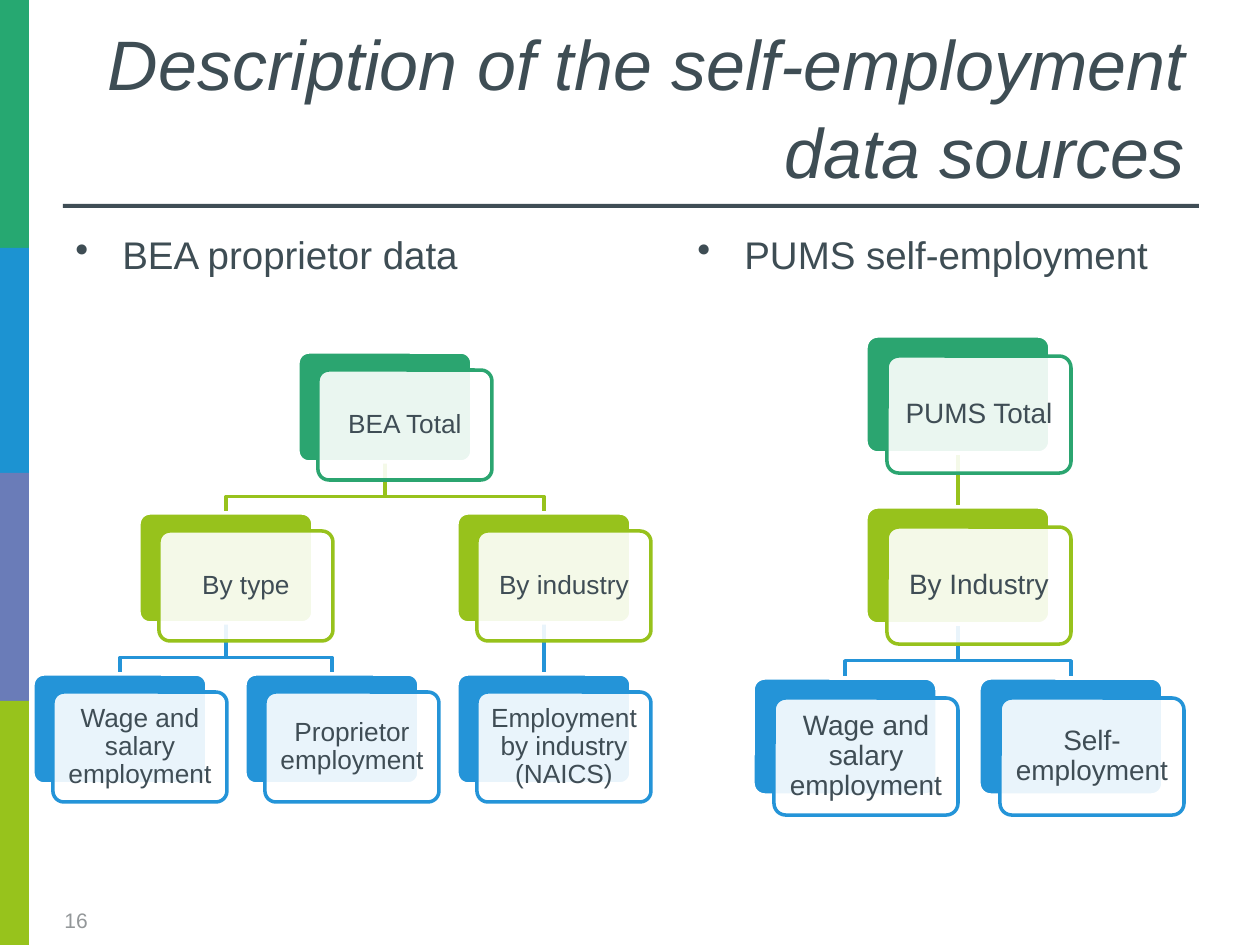
from lxml import etree
from pptx import Presentation
from pptx import util as u
from pptx.dml.color import RGBColor
from pptx.enum import shapes as s, text as t
from pptx.oxml.ns import qn

PX = 914400 / 126
FONT = "Arial"
COLORS = {
    "white": "FFFFFF", "ink": "3E4D54", "rule": "3F4D55", "number": "939799",
    "bar green": "26A871", "bar blue": "1C93D2", "bar violet": "6A7CB8", "bar lime": "97C31C",
    "green": "2BA570", "lime": "97C21C", "blue": "2494D8",
}
LEVELS = ["green", "lime", "blue"]

# Each node is a label and its children.
BEA_TREE = ("BEA Total", [
    ("By type", [("Wage and salary employment", []), ("Proprietor employment", [])]),
    ("By industry", [("Employment by industry (NAICS)", [])]),
])
PUMS_TREE = ("PUMS Total", [
    ("By Industry", [("Wage and salary employment", []), ("Self-employment", [])]),
])


def px(length):
    return u.Emu(round(length * PX))


def rgb(name):
    return RGBColor.from_string(COLORS[name])


def add_box(slide, kind, box, fill, line=None):
    shape = slide.shapes.add_shape(kind, *map(px, box))
    shape.shadow.inherit = False
    shape.fill.solid()
    shape.fill.fore_color.rgb = rgb(fill)
    if line:
        shape.line.color.rgb = rgb(line)
        shape.line.width = u.Pt(2)
    else:
        shape.line.fill.background()
    return shape


def write(frame, words, size, color, align, anchor):
    frame.word_wrap = True
    frame.vertical_anchor = anchor
    paragraph = frame.paragraphs[0]
    paragraph.text = words
    paragraph.alignment = align
    paragraph.font.name = FONT
    paragraph.font.size = u.Pt(size)
    paragraph.font.color.rgb = rgb(color)
    return paragraph


def add_text(slide, box, words, size, color="ink", align=t.PP_ALIGN.LEFT, anchor=t.MSO_ANCHOR.TOP):
    frame = slide.shapes.add_textbox(*map(px, box)).text_frame
    return write(frame, words, size, color, align, anchor)


def add_side_bar(slide, left, width, edges):
    bars = ["bar green", "bar blue", "bar violet", "bar lime"]
    for color, top, bottom in zip(bars, edges, edges[1:]):
        add_box(slide, s.MSO_SHAPE.RECTANGLE, (left, top, width, bottom - top), color)


def add_title(slide, left, top, width, height):
    title = add_text(slide, (left, top, width, height), "Description of the self-employment data sources",
                     40, align=t.PP_ALIGN.RIGHT, anchor=t.MSO_ANCHOR.BOTTOM)
    title.font.italic = True
    title.line_spacing = 1.05
    add_box(slide, s.MSO_SHAPE.RECTANGLE, (left, top + 205, width + 2, 4), "rule")


def add_heading(slide, box, words):
    heading = add_text(slide, box, words, 22)
    heading.line_spacing = 1.1
    properties = heading._p.get_or_add_pPr()
    properties.set("marL", str(px(47)))
    properties.set("indent", str(px(-47)))
    bullet = etree.Element(qn("a:buChar"), char="•")
    properties.insert_element_before(bullet, "a:tabLst", "a:defRPr", "a:extLst")


def place_nodes(node, level=0, first_leaf=0):
    """List (label, level, column, parent column), root first, parents centred on children."""
    label, children = node
    placed, columns, next_leaf = [], [], first_leaf
    for child in children:
        branch, next_leaf = place_nodes(child, level + 1, next_leaf)
        columns.append(branch[0][2])
        placed += branch
    column = (columns[0] + columns[-1]) / 2 if columns else first_leaf
    placed = [entry if entry[1] > level + 1 else (*entry[:3], column) for entry in placed]
    return [(label, level, column, None)] + placed, max(next_leaf, first_leaf + 1)


def add_branch(slide, start_x, start_y, end_x, end_y, color):
    if start_x == end_x:
        branch = slide.shapes.add_connector(
            s.MSO_CONNECTOR.STRAIGHT, px(start_x), px(start_y), px(end_x), px(end_y))
        etree.SubElement(branch._element.spPr, qn("a:effectLst"))
    else:
        bend = start_y + (end_y - start_y) * 0.68
        builder = slide.shapes.build_freeform(px(start_x), px(start_y))
        builder.add_line_segments(
            [(px(start_x), px(bend)), (px(end_x), px(bend)), (px(end_x), px(end_y))], close=False)
        branch = builder.convert_to_shape()
        branch.fill.background()
        branch.shadow.inherit = False
    branch.line.color.rgb = rgb(color)
    branch.line.width = u.Pt(2)


def add_card(slide, left, top, width, height, label, color, size):
    """Draw a solid card with a translucent labelled card shifted over it."""
    shift_x, shift_y = round(width * 0.113), round(height * 0.168)
    rounded = s.MSO_SHAPE.ROUNDED_RECTANGLE
    back = add_box(slide, rounded, (left, top, width, height), color, "white")
    front = add_box(slide, rounded, (left + shift_x, top + shift_y, width, height), "white", color)
    back.adjustments[0] = front.adjustments[0] = 0.1
    fill_color = front._element.spPr.find(qn("a:solidFill"))[0]
    etree.SubElement(fill_color, qn("a:alpha"), val="90000")
    frame = front.text_frame
    frame.margin_left = frame.margin_right = frame.margin_top = frame.margin_bottom = px(8)
    words = write(frame, label, size, "rule", t.PP_ALIGN.CENTER, t.MSO_ANCHOR.MIDDLE)
    words.line_spacing = 0.9


def add_tree(slide, left, top, tree, card_width, card_height, column_step, level_step, size):
    nodes, _ = place_nodes(tree)

    def card_left(column):
        return left + column * column_step

    for _, level, column, parent in nodes:
        if parent is not None:
            level_top = top + level * level_step
            add_branch(slide, card_left(parent) + card_width / 2, level_top - level_step + card_height,
                       card_left(column) + card_width / 2, level_top, LEVELS[level])
    for label, level, column, _ in nodes:
        add_card(slide, card_left(column), top + level * level_step, card_width, card_height,
                 label, LEVELS[level], size)


def main():
    deck = Presentation()
    deck.slide_width, deck.slide_height = px(1260), px(945)
    slide = deck.slides.add_slide(deck.slide_layouts[6])
    add_side_bar(slide, 0, 29, [0, 248, 473, 701, 945])
    add_title(slide, 63, -1, 1134, 200)
    add_heading(slide, (63, 220, 557, 624), "BEA proprietor data")
    add_heading(slide, (685, 220, 512, 624), "PUMS self-employment")
    add_text(slide, (52, 895, 92, 50), "16", 12, "number", anchor=t.MSO_ANCHOR.MIDDLE)
    add_tree(slide, 33, 352, BEA_TREE, 174, 110, 212, 161, 15)
    add_tree(slide, 753, 336, PUMS_TREE, 184, 117, 226, 171, 16)
    deck.save("out.pptx")


if __name__ == "__main__":
    main()
